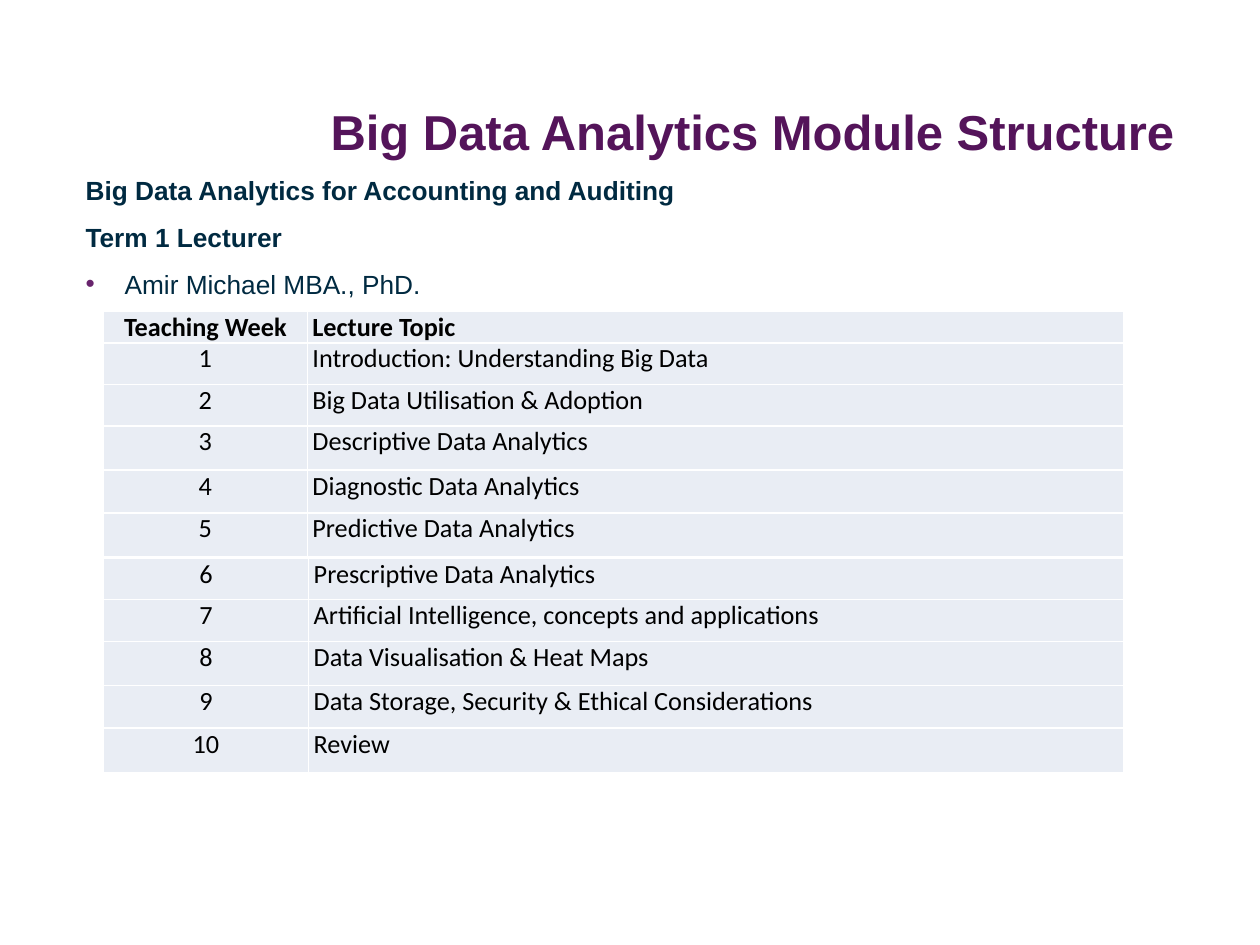
from lxml import etree
from pptx import Presentation, util as u
from pptx.dml.color import RGBColor
from pptx.enum import text
from pptx.oxml.ns import qn

COLORS = {"title": "54145A", "body": "002A41", "bullet": "68246D",
          "cell": "E9EDF4", "border": "FFFFFF", "table": "000000"}
WIDTH, HEIGHT = 10, 7.5
MARGIN = 0.068 * WIDTH
CONTENT = WIDTH - 2 * MARGIN
TABLE_LEFT, TABLE_WIDTH = 0.082 * WIDTH, 0.81 * WIDTH
FIRST_WEEKS = [
    ("Teaching Week", "Lecture Topic"),
    ("1", "Introduction: Understanding Big Data"),
    ("2", "Big Data Utilisation & Adoption"),
    ("3", "Descriptive Data Analytics"),
    ("4", "Diagnostic Data Analytics"),
    ("5", "Predictive Data Analytics"),
]
LAST_WEEKS = [
    ("6", "Prescriptive Data Analytics"),
    ("7", "Artificial Intelligence, concepts and applications"),
    ("8", "Data Visualisation & Heat Maps"),
    ("9", "Data Storage, Security & Ethical Considerations"),
    ("10", "Review"),
]


def format_runs(paragraph, font, size, color, bold=False):
    """Format every run of a paragraph."""
    for run in paragraph.runs:
        run.font.name, run.font.size, run.font.bold = font, u.Pt(size), bold
        run.font.color.rgb = RGBColor.from_string(COLORS[color])


def clear_insets(frame):
    """Wrap the text and remove the frame's margins."""
    frame.word_wrap = True
    frame.margin_left = frame.margin_right = frame.margin_top = frame.margin_bottom = 0


def add_bullet(paragraph, indent):
    """Give a paragraph a coloured bullet and a hanging indent."""
    props = paragraph._p.get_or_add_pPr()
    props.set("marL", str(u.Inches(indent)))
    props.set("indent", str(-u.Inches(indent)))
    color = etree.SubElement(props, qn("a:buClr"))
    etree.SubElement(color, qn("a:srgbClr"), val=COLORS["bullet"])
    etree.SubElement(props, qn("a:buFont"), typeface="Arial")
    etree.SubElement(props, qn("a:buChar"), char="•")


def place_title(slide, left, top, width, height):
    """Place the right-aligned heading in its box."""
    title = slide.shapes.title
    title.left, title.top = u.Inches(left), u.Inches(top)
    title.width, title.height = u.Inches(width), u.Inches(height)
    frame = title.text_frame
    frame.text = "Big Data Analytics Module Structure"
    clear_insets(frame)
    frame.vertical_anchor = text.MSO_ANCHOR.MIDDLE
    heading = frame.paragraphs[0]
    heading.alignment = text.PP_ALIGN.RIGHT
    heading.line_spacing = 0.85
    format_runs(heading, "Arial", 28, "title", True)


def place_intro(slide, left, top, width, height):
    """Place the module name and the lecturer in their box."""
    box = slide.shapes.add_textbox(*map(u.Inches, (left, top, width, height)))
    frame = box.text_frame
    clear_insets(frame)
    frame.text = "\n".join(["Big Data Analytics for Accounting and Auditing",
                            "Term 1 Lecturer", "Amir Michael MBA., PhD."])
    module, term, lecturer = frame.paragraphs
    for line in (module, term, lecturer):
        line.line_spacing = 1.05
        if line is not module:
            line.space_before = u.Pt(8)
        format_runs(line, "Arial", 15, "body", line is not lecturer)
    add_bullet(lecturer, 0.31)


def style_cell(cell, words, align, bold):
    """Fill, border and write one table cell."""
    cell.text = words
    cell.margin_left = cell.margin_right = u.Inches(0.04)
    cell.margin_top = cell.margin_bottom = 0
    cell.text_frame.paragraphs[0].alignment = align
    format_runs(cell.text_frame.paragraphs[0], "Calibri", 15, "table", bold)
    props = cell._tc.get_or_add_tcPr()
    for side in ("a:lnL", "a:lnR", "a:lnT", "a:lnB"):
        line = etree.SubElement(props, qn(side), w=str(u.Pt(1)))
        fill = etree.SubElement(line, qn("a:solidFill"))
        etree.SubElement(fill, qn("a:srgbClr"), val=COLORS["border"])
    cell.fill.solid()
    cell.fill.fore_color.rgb = RGBColor.from_string(COLORS["cell"])


def place_schedule(slide, left, top, width, weeks, row_heights, week_width, header=False):
    """Place a table of weeks and topics from the given top left corner."""
    frame = slide.shapes.add_table(
        len(weeks), 2, *map(u.Inches, (left, top, width, sum(row_heights))))
    table = frame.table
    table.first_row, table.horz_banding = header, False
    for column, size in zip(table.columns, (week_width, width - week_width)):
        column.width = u.Inches(size)
    aligns = (text.PP_ALIGN.CENTER, text.PP_ALIGN.LEFT)
    for index, (entry, size) in enumerate(zip(weeks, row_heights)):
        table.rows[index].height = u.Inches(size)
        for column, (words, align) in enumerate(zip(entry, aligns)):
            style_cell(table.cell(index, column), words, align, header and index == 0)


def main():
    """Build the module structure slide."""
    deck = Presentation()
    deck.slide_width, deck.slide_height = u.Inches(WIDTH), u.Inches(HEIGHT)
    slide = deck.slides.add_slide(deck.slide_layouts[5])
    place_title(slide, MARGIN, 0.78, CONTENT, 0.59)
    place_intro(slide, MARGIN, 1.37, CONTENT, 3.34)
    week_rows = [0.33, 0.33, 0.35, 0.34, 0.35]
    place_schedule(slide, TABLE_LEFT, 2.47, TABLE_WIDTH, FIRST_WEEKS,
                   [0.25] + week_rows, 1.62, header=True)
    place_schedule(slide, TABLE_LEFT, 4.43, TABLE_WIDTH, LAST_WEEKS, week_rows, 1.63)
    deck.save("out.pptx")


if __name__ == "__main__":
    main()
